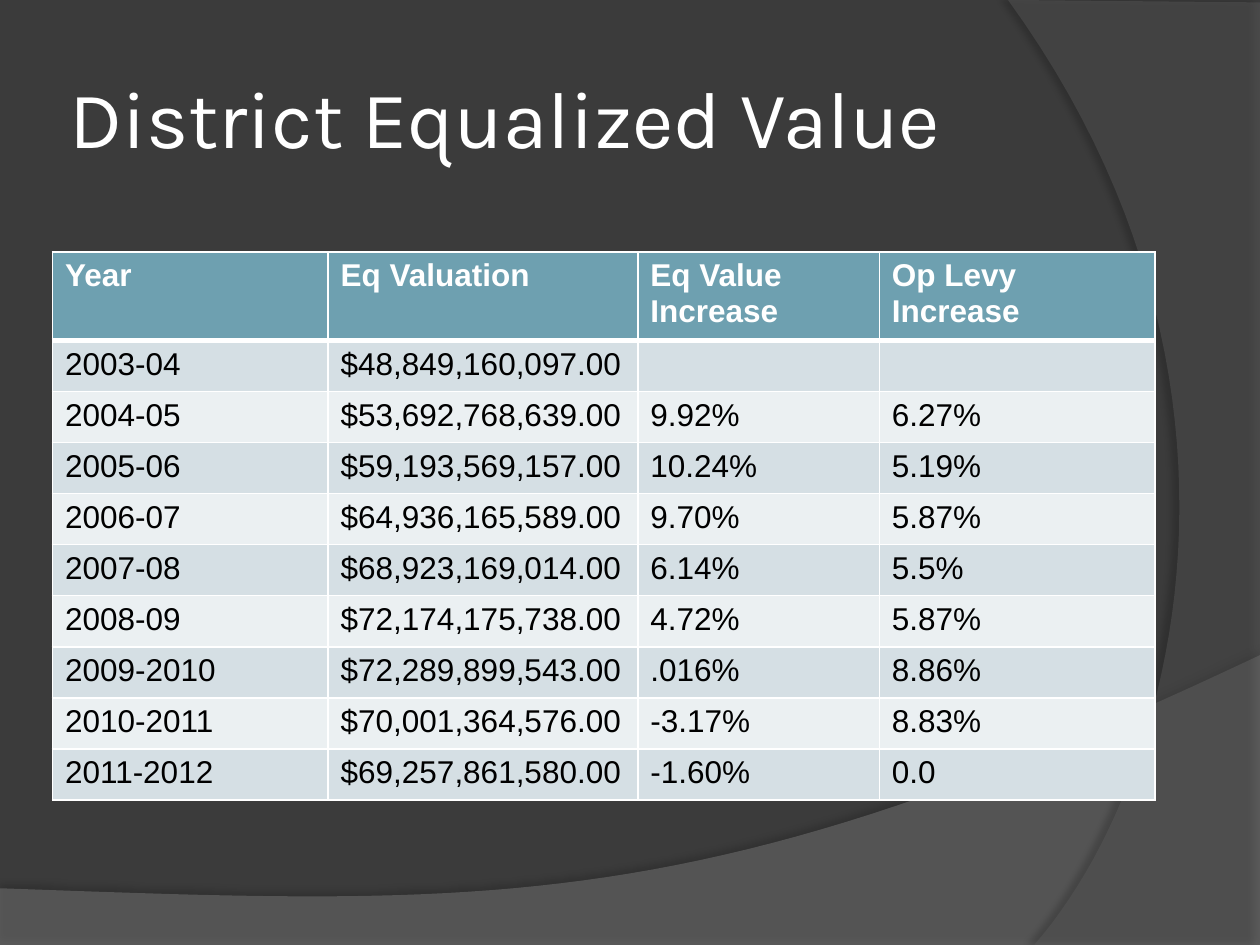
from dataclasses import dataclass
from lxml.etree import SubElement
from pptx import Presentation
from pptx.dml.color import RGBColor
from pptx.enum.text import MSO_ANCHOR
from pptx.oxml.ns import qn
from pptx.util import Pt


@dataclass
class Theme:
    back: str = "3B3B3B"
    wave: str = "7F7F7F"
    side: str = "5E5E5E"
    head: str = "6EA0B0"
    bands: tuple = ("D5DFE4", "EBF0F2")
    light: str = "FFFFFF"
    dark: str = "000000"
    title: int = 46
    body: int = 18
    title_font: str = "Karla"
    body_font: str = "Arial"


def write(frame, text, size, font, color, bold=False):
    run = frame.paragraphs[0].add_run()
    run.text = text
    run.font.size = Pt(size)
    run.font.name = font
    run.font.bold = bold
    run.font.color.rgb = RGBColor.from_string(color)


def curve(start, pull, push, end, steps=48):
    points = []
    for step in range(steps + 1):
        t = step / steps
        u = 1 - t
        points.append(tuple(
            u**3 * a + 3 * u * u * t * b + 3 * u * t * t * c + t**3 * d
            for a, b, c, d in zip(start, pull, push, end)))
    return points


def tint(parent, color, alpha=100):
    node = SubElement(parent, qn("a:srgbClr"), val=color)
    SubElement(node, qn("a:alpha"), val=str(alpha * 1000))


class Deck:
    def __init__(self, theme):
        self.theme = theme
        self.file = Presentation()
        self.file.slide_width, self.file.slide_height = Pt(720), Pt(540)
        self.slide = self.file.slides.add_slide(self.file.slide_layouts[6])
        fill = self.slide.background.fill
        fill.solid()
        fill.fore_color.rgb = RGBColor.from_string(theme.back)

    def sweep(self, points, color, alpha, shade, gap, angle):
        points = [(Pt(x), Pt(y)) for x, y in points]
        pen = self.slide.shapes.build_freeform(*points[0])
        pen.add_line_segments(points[1:], close=True)
        shape = pen.convert_to_shape()
        shape.line.fill.background()
        shape.fill.solid()
        shape.fill.fore_color.rgb = RGBColor.from_string(color)
        node = shape.fill.fore_color._xFill.find(qn("a:srgbClr"))
        SubElement(node, qn("a:alpha"), val=str(alpha * 1000))
        shape.shadow.inherit = False
        effects = shape._element.spPr.find(qn("a:effectLst"))
        shadow = SubElement(
            effects, qn("a:outerShdw"), blurRad=str(Pt(4)),
            dist=str(Pt(gap)), dir=str(angle * 60000), rotWithShape="0")
        tint(shadow, self.theme.dark, shade)

    def title(self, text, left, top, width, height):
        box = self.slide.shapes.add_textbox(
            Pt(left), Pt(top), Pt(width), Pt(height))
        frame = box.text_frame
        frame.word_wrap = True
        frame.vertical_anchor = MSO_ANCHOR.MIDDLE
        frame.margin_left = frame.margin_right = Pt(3.6)
        look = self.theme
        write(frame, text, size=look.title, font=look.title_font,
              color=look.light)

    def edge(self, cell, side, width):
        line = SubElement(cell._tc.get_or_add_tcPr(), qn("a:ln" + side),
                          w=str(Pt(width)))
        tint(SubElement(line, qn("a:solidFill")), self.theme.light)

    def table(self, rows, left, top, widths, heights):
        look = self.theme
        grid = self.slide.shapes.add_table(
            len(rows), len(widths), Pt(left), Pt(top),
            Pt(sum(widths)), Pt(sum(heights))).table
        grid.horz_banding = False
        for column, width in zip(grid.columns, widths):
            column.width = Pt(width)
        for y, (row, height) in enumerate(zip(rows, heights)):
            grid.rows[y].height = Pt(height)
            head = y == 0
            for x, text in enumerate(row):
                cell = grid.cell(y, x)
                for side in "LRTB":
                    thick = (y, side) in ((0, "B"), (1, "T"))
                    self.edge(cell, side, 3 if thick else 1)
                cell.fill.solid()
                cell.fill.fore_color.rgb = RGBColor.from_string(
                    look.head if head else look.bands[(y - 1) % 2])
                if text:
                    write(cell.text_frame, text, size=look.body,
                          font=look.body_font, bold=head,
                          color=look.light if head else look.dark)


ROWS = [
    ("Year", "Eq Valuation", "Eq Value Increase", "Op Levy Increase"),
    ("2003-04", "$48,849,160,097.00", "", ""),
    ("2004-05", "$53,692,768,639.00", "9.92%", "6.27%"),
    ("2005-06", "$59,193,569,157.00", "10.24%", "5.19%"),
    ("2006-07", "$64,936,165,589.00", "9.70%", "5.87%"),
    ("2007-08", "$68,923,169,014.00", "6.14%", "5.5%"),
    ("2008-09", "$72,174,175,738.00", "4.72%", "5.87%"),
    ("2009-2010", "$72,289,899,543.00", ".016%", "8.86%"),
    ("2010-2011", "$70,001,364,576.00", "-3.17%", "8.83%"),
    ("2011-2012", "$69,257,861,580.00", "-1.60%", "0.0"),
]


def main():
    theme = Theme()
    deck = Deck(theme)
    wave = curve((720, 374.4), (402.5, 525), (281.5, 517.7), (0, 507.6))
    side = curve((591, 540), (673.2, 445.7), (733, 216), (576, 0))
    deck.sweep([(0, 540), (720, 540)] + wave, theme.wave, alpha=45,
               shade=35, gap=3.5, angle=270)
    deck.sweep([(720, 1.4), (720, 540)] + side, theme.side, alpha=40,
               shade=45, gap=4, angle=180)
    deck.title("District Equalized Value", 36, 21.6, 588, 90)
    deck.table(ROWS, 30, 144, widths=[157.5, 177, 138, 157.5],
               heights=[47.4] + [29.2] * (len(ROWS) - 1))
    deck.file.save("out.pptx")


if __name__ == "__main__":
    main()
